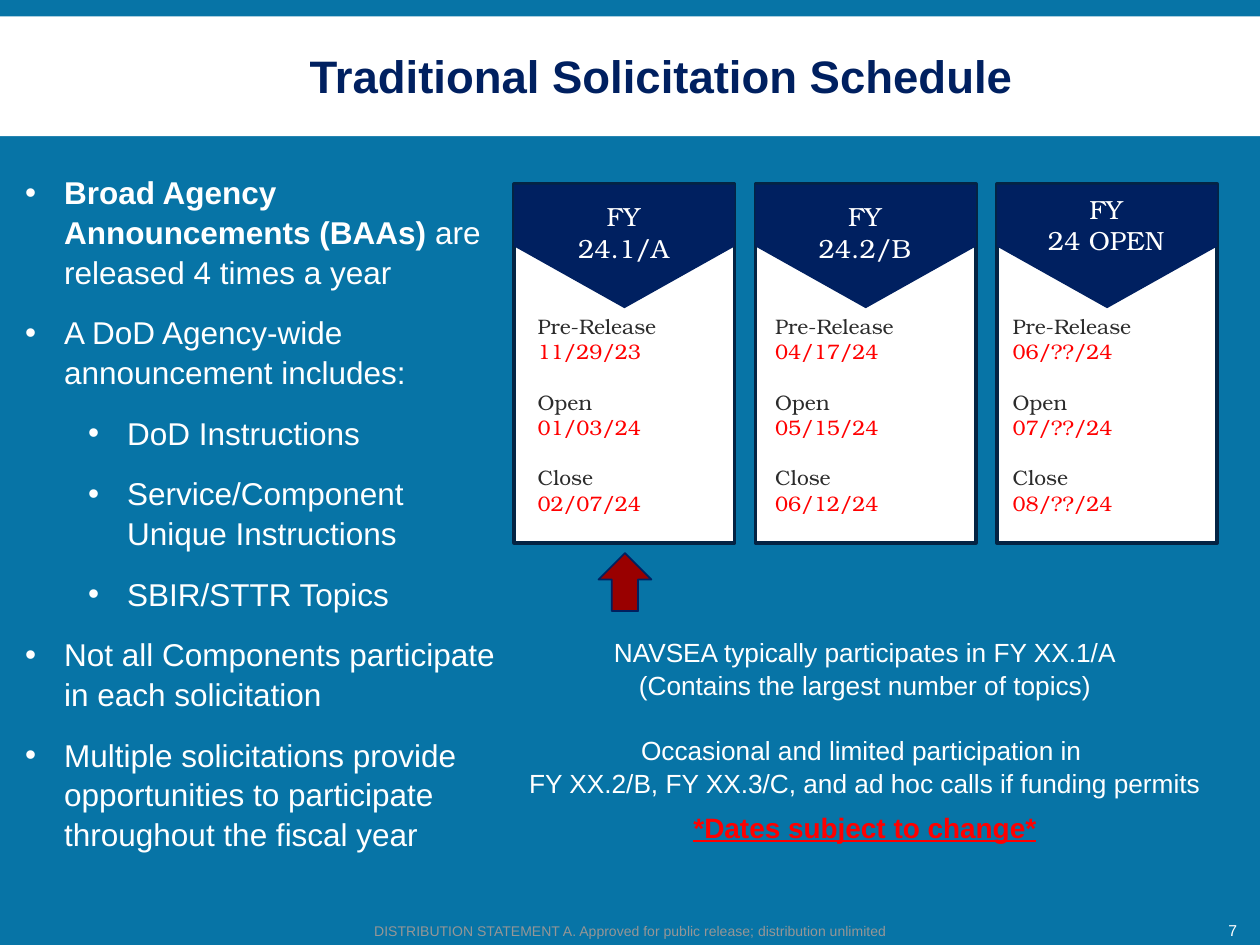
from lxml.etree import SubElement
from pptx import Presentation
from pptx.dml.color import RGBColor
from pptx.enum.shapes import MSO_SHAPE as Preset
from pptx.enum.text import MSO_ANCHOR as Anchor, MSO_AUTO_SIZE as AutoSize, PP_ALIGN as Align
from pptx.oxml.ns import qn
from pptx.util import Pt

THEME = {
    "blue": RGBColor.from_string("0774A6"),
    "white": RGBColor.from_string("FFFFFF"),
    "navy": RGBColor.from_string("002060"),
    "edge": RGBColor.from_string("042444"),
    "ink": RGBColor.from_string("2C2C2C"),
    "red": RGBColor.from_string("FF0000"),
    "maroon": RGBColor.from_string("990000"),
    "gray": RGBColor.from_string("969696"),
    "sans": "Arial",
    "serif": "TeX Gyre Bonum",
    "title": Pt(26),
    "body": Pt(18),
    "notice": Pt(16),
    "note": Pt(15),
    "date": Pt(12),
    "number": Pt(9),
    "footer": Pt(8),
}


def add_block(kind, left, top, width, height, fill, line=None, weight=0):
    shape = slide.shapes.add_shape(kind, Pt(left), Pt(top), Pt(width), Pt(height))
    shape.shadow.inherit = False
    shape.fill.solid()
    shape.fill.fore_color.rgb = THEME[fill]
    if line:
        shape.line.color.rgb = THEME[line]
        shape.line.width = Pt(weight)
    else:
        shape.line.fill.background()
    return shape


def write_text(box, lines, size, color, face="sans", align=Align.CENTER, **spacing):
    frame = box.text_frame
    frame.word_wrap = True
    frame.auto_size = AutoSize.NONE
    for index, line in enumerate(lines):
        paragraph = frame.paragraphs[0] if index == 0 else frame.add_paragraph()
        paragraph.alignment = align
        for name, value in spacing.items():
            setattr(paragraph, name, value)
        for text, changes in line:
            run = paragraph.add_run()
            run.text = text
            formats = {"name": THEME[face], "size": THEME[size], "bold": False, **changes}
            run.font.color.rgb = THEME[formats.pop("color", color)]
            for name, value in formats.items():
                setattr(run.font, name, value)
    return frame.paragraphs


presentation = Presentation()
presentation.slide_width, presentation.slide_height = Pt(720), Pt(540)
slide = presentation.slides.add_slide(presentation.slide_layouts[5])
slide.background.fill.solid()
slide.background.fill.fore_color.rgb = THEME["blue"]

band = add_block(Preset.RECTANGLE, 0, 9.4, 720, 68.4, "white")
slide.shapes.title._element.addprevious(band._element)
title = slide.shapes.title
title.left, title.top, title.width, title.height = Pt(90), Pt(18.7), Pt(576), Pt(48.2)
title.text_frame.vertical_anchor = Anchor.MIDDLE
write_text(title, [[("Traditional Solicitation Schedule", {"bold": True})]], "title", "navy")

bullets = [
    (0, [("Broad Agency Announcements (BAAs) ", {"bold": True}), ("are released 4 times a year", {})]),
    (0, [("A DoD Agency-wide announcement includes:", {})]),
    (1, [("DoD Instructions", {})]),
    (1, [("Service/Component Unique Instructions", {})]),
    (1, [("SBIR/STTR Topics", {})]),
    (0, [("Not all Components participate in each solicitation", {})]),
    (0, [("Multiple solicitations provide opportunities to participate throughout the fiscal year", {})]),
]
body = slide.shapes.add_textbox(Pt(14.4), Pt(97.9), Pt(276.5), Pt(378))
for side in ("left", "top", "right", "bottom"):
    setattr(body.text_frame, f"margin_{side}", 0)
paragraphs = write_text(body, [line for level, line in bullets], "body", "white",
                        align=Align.LEFT, space_after=Pt(12), line_spacing=1.05)
for paragraph, (level, line) in zip(paragraphs, bullets):
    paragraph.level = level
    properties = paragraph._p.get_or_add_pPr()
    properties.set("marL", str(Pt(22.3 + 36 * level)))
    properties.set("indent", str(Pt(-22.3)))
    SubElement(properties, qn("a:buFont")).set("typeface", THEME["sans"])
    SubElement(properties, qn("a:buChar")).set("char", "•")

cards = [
    ("24.1/A", 110.9, ["11/29/23", "01/03/24", "02/07/24"]),
    ("24.2/B", 110.9, ["04/17/24", "05/15/24", "06/12/24"]),
    ("24 OPEN", 106.6, ["06/??/24", "07/??/24", "08/??/24"]),
]
for index, (cycle, label_top, dates) in enumerate(cards):
    left = 293.8 + 137.9 * index
    add_block(Preset.RECTANGLE, left, 105.1, 126, 205.2, "white", "edge", 2)
    header = add_block(Preset.PENTAGON, left + 27.7, 77.8, 70.6, 126, "navy")
    header.rotation = 90
    label = slide.shapes.add_textbox(Pt(left + 13), Pt(label_top), Pt(99), Pt(43.9))
    write_text(label, [[("FY", {})], [(cycle, {})]], "note", "white", "serif")

    lines = []
    for stage, date in zip(["Pre-Release", "Open", "Close"], dates):
        lines += [[(stage, {})], [(date, {"color": "red"})]]
    schedule = slide.shapes.add_textbox(Pt(300.2 + 135.7 * index), Pt(175.7), Pt(100), Pt(123.8))
    paragraphs = write_text(schedule, lines, "date", "ink", "serif", Align.LEFT)
    for paragraph in paragraphs[2::2]:
        paragraph.space_before = Pt(14.4)

add_block(Preset.UP_ARROW, 342, 316.1, 30.2, 33.1, "maroon", "navy", 1)

notes = [
    "NAVSEA typically participates in FY XX.1/A",
    "(Contains the largest number of topics)",
    "Occasional and limited participation in ",
    "FY XX.2/B, FY XX.3/C, and ad hoc calls if funding permits",
]
participation = slide.shapes.add_textbox(Pt(293.8), Pt(359.3), Pt(401), Pt(97.9))
paragraphs = write_text(participation, [[(note, {})] for note in notes], "note", "white", line_spacing=1.05)
paragraphs[2].space_before = Pt(18)

captions = [
    ("*Dates subject to change*", 305.3, 459.4, 378, 26.6, "notice", "red", {"bold": True, "underline": True}),
    ("7", 689, 522.7, 31, 17.3, "number", "white", {}),
    ("DISTRIBUTION STATEMENT A. Approved for public release; distribution unlimited",
     204.5, 523.4, 311.8, 16.6, "footer", "gray", {}),
]
for text, left, top, width, height, size, color, changes in captions:
    caption = slide.shapes.add_textbox(Pt(left), Pt(top), Pt(width), Pt(height))
    write_text(caption, [[(text, changes)]], size, color)

presentation.save("out.pptx")
